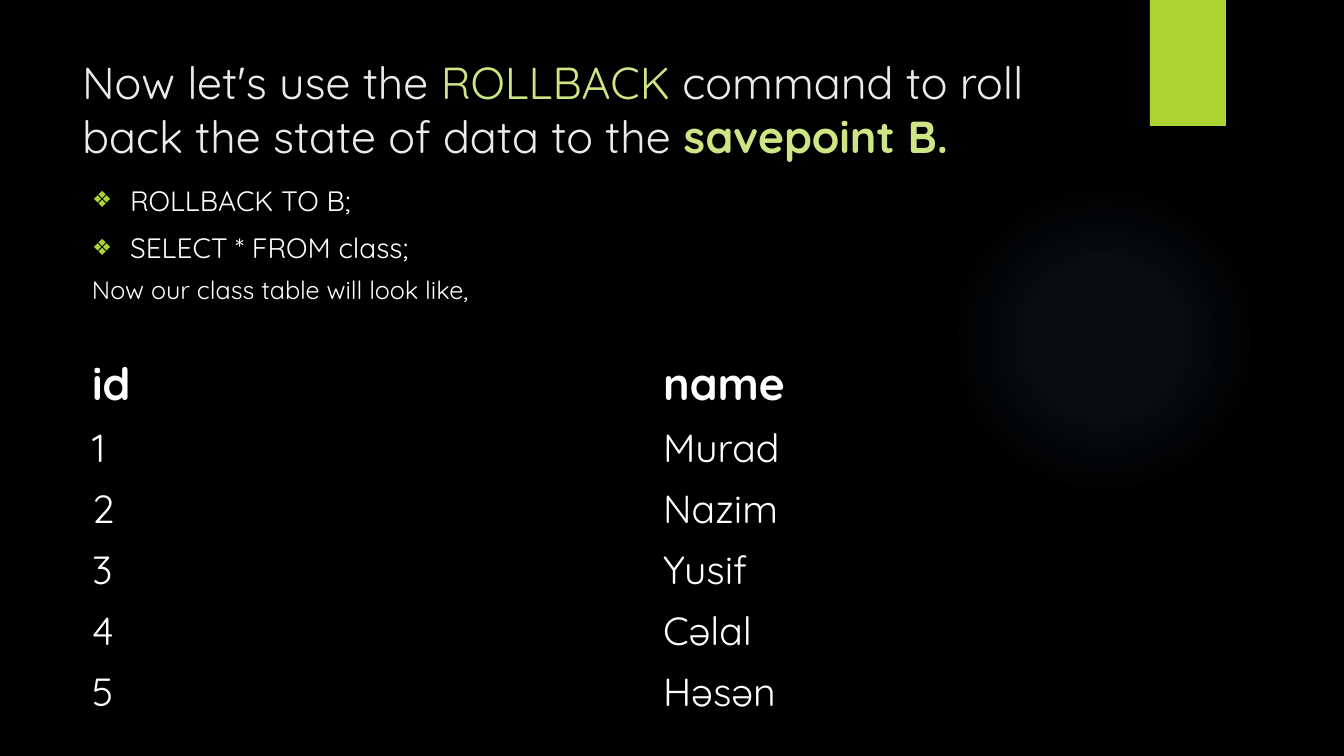
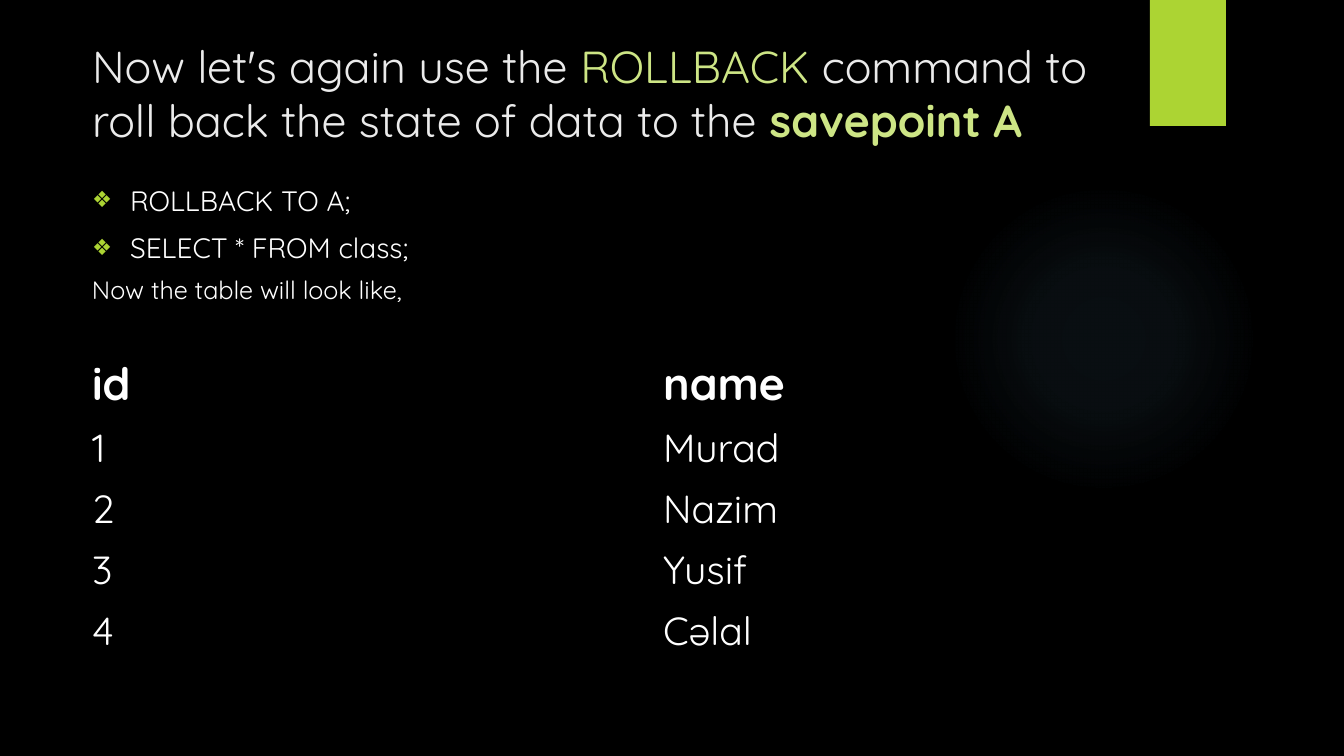
from dataclasses import dataclass

from pptx import Presentation
from pptx.dml.color import RGBColor as RGB
from pptx.enum.shapes import MSO_SHAPE as SHAPE
from pptx.enum.text import MSO_ANCHOR as ANCHOR, MSO_AUTO_SIZE as FIT, PP_ALIGN as ALIGN
from pptx.oxml import parse_xml
from pptx.oxml.ns import nsdecls, qn
from pptx.util import Pt


@dataclass(frozen=True)
class Theme:
    font: str = "Quicksand"
    back: str = "000000"
    band: str = "ACD433"
    glow: str = "7AC4F0"
    title: str = "EBEBEB"
    key: str = "CDE585"
    text: str = "FFFFFF"
    title_pt: int = 32
    head_pt: int = 32
    cell_pt: int = 28
    list_pt: int = 20
    note_pt: int = 18


T = Theme()
W, H = 1344, 756
SCALE = 12192000 / W
LEFT, COL_W, ROW_H, INDENT = 82, 571, 61, 38
NO_GRID = "{2D5ABB26-0587-4C30-8999-92F81FD0307C}"
NAMES = ["Murad", "Nazim", "Yusif", "Cəlal", "Həsən"]

SLIDES = [
    dict(title=[("Now let's use the ", False), ("ROLLBACK", False),
                (" command to roll back the state of data to the ", False),
                ("savepoint B.", True)],
         title_box=(72, 50, 1037, 154), body_h=148,
         code=["ROLLBACK TO B;", "SELECT * FROM class;"],
         note="Now our class table will look like,", names=NAMES),
    dict(title=[("Now let's again use the ", False), ("ROLLBACK", False),
                (" command to roll back the state of data to the ", False),
                ("savepoint A", True)],
         title_box=(LEFT, 34, 1073, 154), body_h=463,
         code=["ROLLBACK TO A;", "SELECT * FROM class;"],
         note="Now the table will look like,", names=NAMES[:4]),
]


def px(*lengths):
    """Turn px lengths into EMU."""
    return [round(n * SCALE) for n in lengths]


def add_run(p, text, size, color=T.text, bold=False):
    r = p.add_run()
    r.text = text
    r.font.name, r.font.size, r.font.bold = T.font, Pt(size), bold
    r.font.color.rgb = RGB.from_string(color)


prs = Presentation()
prs.slide_width, prs.slide_height = px(W, H)
layout = prs.slide_layouts[1]
fill = prs.slide_master.background.fill
fill.solid()
fill.fore_color.rgb = RGB.from_string(T.back)
slides = [prs.slides.add_slide(layout) for _ in SLIDES]

# Glow and band are drawn once, then moved to the shared layout
shapes = slides[0].shapes
glow = shapes.add_shape(SHAPE.OVAL, *px(949, 184, 310, 310))
glow.fill.background()
stops = "".join(
    f'<a:gs pos="{pos}000"><a:srgbClr val="{T.glow}"><a:alpha val="{alpha}000"/></a:srgbClr></a:gs>'
    for pos, alpha in [(0, 7), (36, 6), (69, 0)])
sp_pr = glow._element.spPr
sp_pr.replace(sp_pr.find(qn("a:noFill")), parse_xml(
    f'<a:gradFill {nsdecls("a")}><a:gsLst>{stops}</a:gsLst><a:path path="circle">'
    '<a:fillToRect l="50000" t="50000" r="50000" b="50000"/></a:path></a:gradFill>'))
band = shapes.add_shape(SHAPE.RECTANGLE, *px(1150, 0, 76, 126))
band.fill.solid()
band.fill.fore_color.rgb = RGB.from_string(T.band)
for sp in (glow, band):
    sp.line.fill.background()
    sp.shadow.inherit = False
    layout.shapes._spTree.append(sp._element)

for s, data in zip(slides, SLIDES):
    title, body = s.shapes.title, s.placeholders[1]
    body_box = (LEFT, 178, 986, data["body_h"])
    for sp, box in [(title, data["title_box"]), (body, body_box)]:
        sp.left, sp.top, sp.width, sp.height = px(*box)
        tf = sp.text_frame
        tf.word_wrap, tf.auto_size, tf.vertical_anchor = True, FIT.NONE, ANCHOR.TOP

    p = title.text_frame.paragraphs[0]
    p.alignment = ALIGN.LEFT
    for i, (text, bold) in enumerate(data["title"]):
        add_run(p, text, T.title_pt, T.key if i % 2 else T.title, bold)

    tf = body.text_frame
    for i, line in enumerate(data["code"]):
        p = tf.add_paragraph() if i else tf.paragraphs[0]
        p_pr = p._p.get_or_add_pPr()
        margin, = px(INDENT)
        p_pr.set("marL", str(margin))
        p_pr.set("indent", str(-margin))
        for bullet in (f'<a:buClr {nsdecls("a")}><a:srgbClr val="{T.band}"/></a:buClr>',
                       f'<a:buSzPct {nsdecls("a")} val="80000"/>',
                       f'<a:buChar {nsdecls("a")} char="❖"/>'):
            p_pr.append(parse_xml(bullet))
        p.space_before = Pt(10 if i else 0)
        add_run(p, line, T.list_pt)

    rows = [("id", "name")] + [(str(n), name) for n, name in enumerate(data["names"], 1)]
    table = s.shapes.add_table(
        len(rows), 2, *px(LEFT, 351, 2 * COL_W, ROW_H * len(rows))).table
    table.first_row = table.horz_banding = False
    table._tbl.tblPr.find(qn("a:tableStyleId")).text = NO_GRID
    for i, row in enumerate(rows):
        for j, text in enumerate(row):
            cell = table.cell(i, j)
            cell.fill.background()
            cell.vertical_anchor = ANCHOR.MIDDLE
            add_run(cell.text_frame.paragraphs[0], text,
                    T.cell_pt if i else T.head_pt, bold=i == 0)

    tf = s.shapes.add_textbox(*px(LEFT, 269, 500, 40)).text_frame
    tf.word_wrap = True
    add_run(tf.paragraphs[0], data["note"], T.note_pt)

prs.save("out.pptx")
